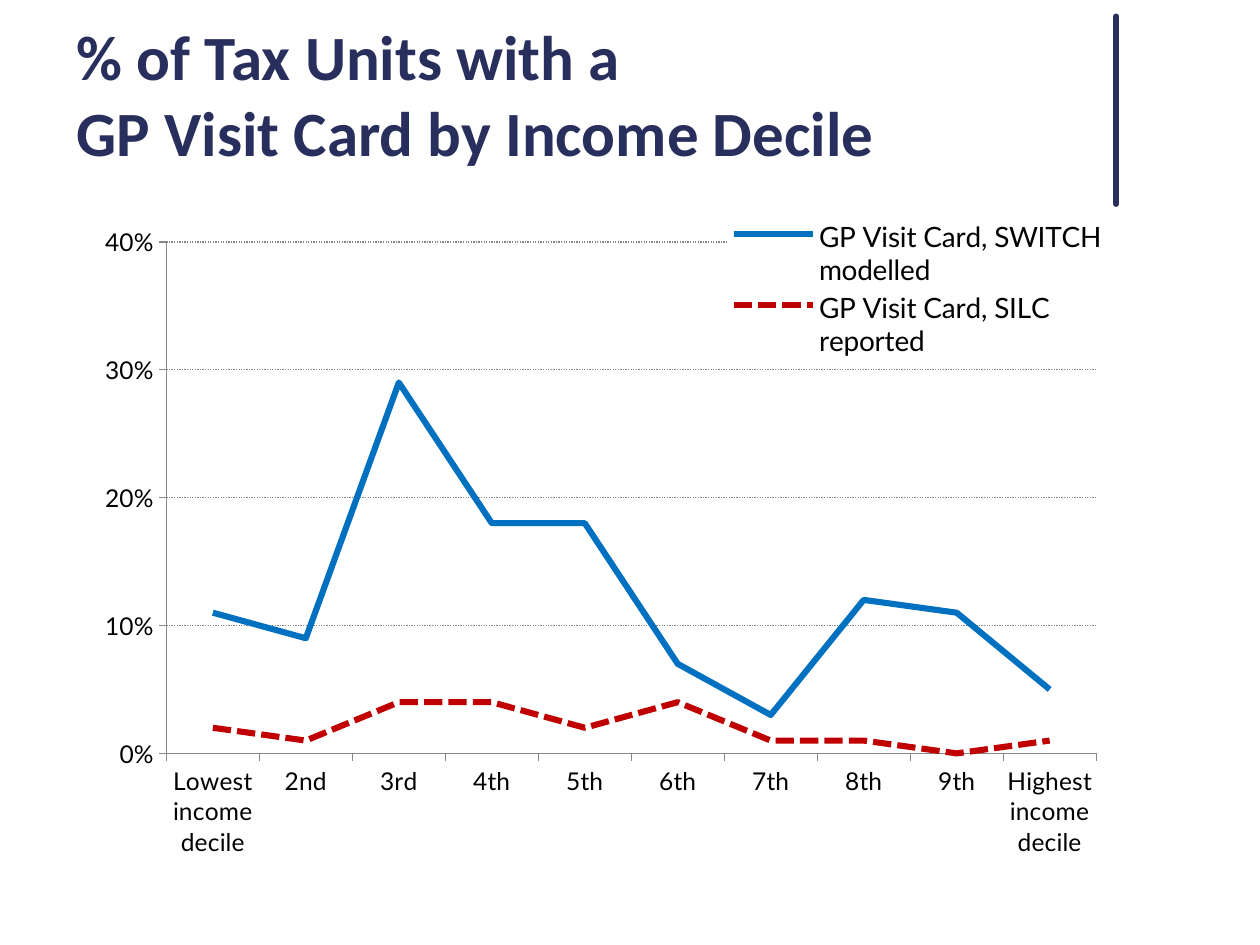
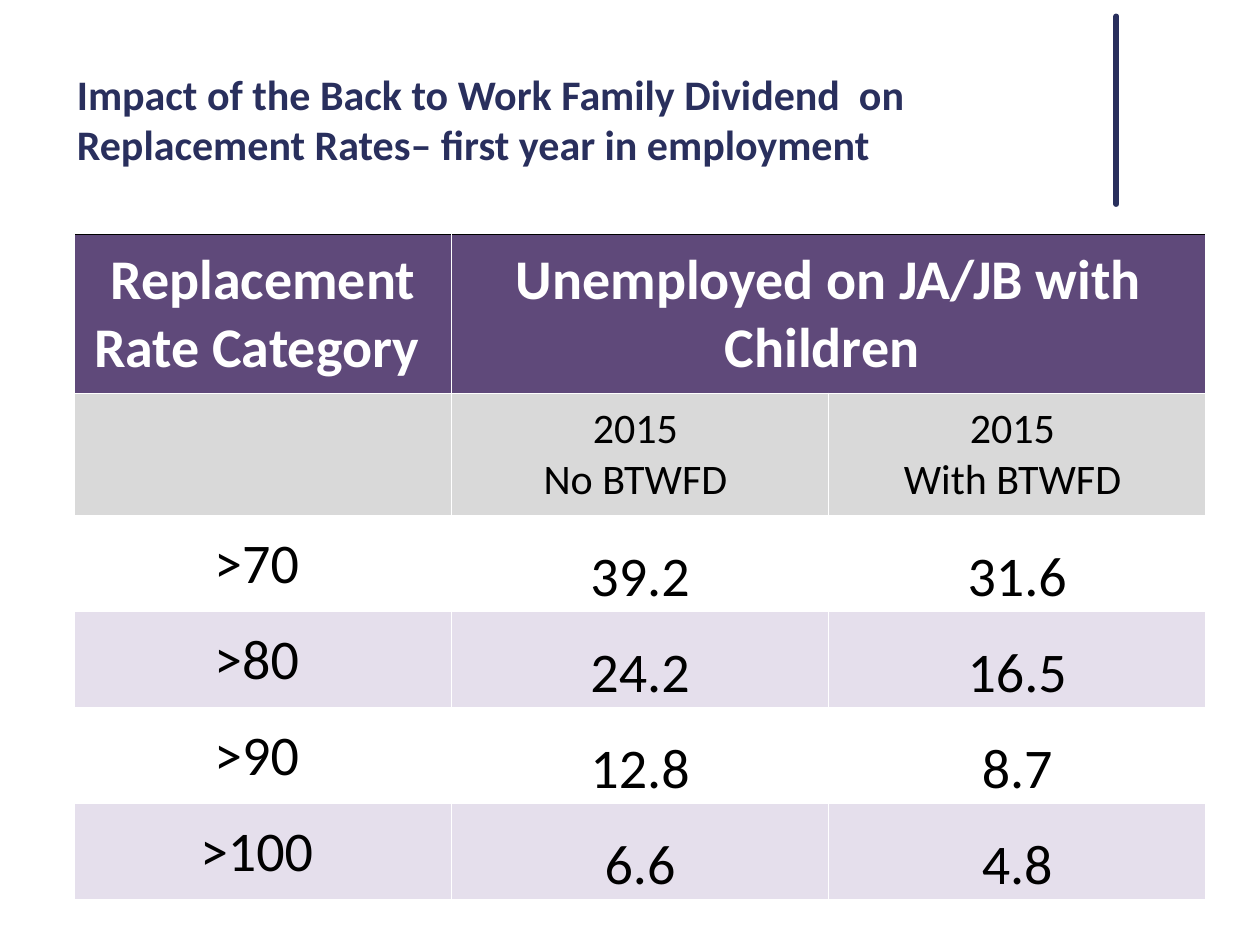
from dataclasses import dataclass
from typing import Any

from lxml.etree import SubElement
from pptx import Presentation
from pptx.chart.data import CategoryChartData
from pptx.dml.color import RGBColor
from pptx.enum.chart import XL_CHART_TYPE, XL_LEGEND_POSITION, XL_TICK_MARK
from pptx.enum.dml import MSO_LINE
from pptx.enum.shapes import MSO_CONNECTOR
from pptx.enum.text import MSO_ANCHOR, PP_ALIGN
from pptx.oxml import parse_xml
from pptx.oxml.ns import nsdecls, qn
from pptx.util import Inches, Pt

NAVY = RGBColor(0x29, 0x2F, 0x5D)
BLUE = RGBColor(0x00, 0x70, 0xC0)
RED = RGBColor(0xC0, 0x00, 0x00)
PURPLE = RGBColor(0x5F, 0x49, 0x7A)
LILAC = RGBColor(0xE5, 0xDF, 0xEC)
SILVER = RGBColor(0xD9, 0xD9, 0xD9)
GRAY = RGBColor(0x86, 0x86, 0x86)
BLACK = RGBColor(0, 0, 0)
WHITE = RGBColor(0xFF, 0xFF, 0xFF)
TITLE = {"name": "Calibri", "bold": True}
CHART = "Lato"
CHART_W, CHART_H = 8.19, 5.2
TABLE_W, TABLE_H = 8.98, 5.28


@dataclass
class Trend:
    name: str
    color: RGBColor
    dash: Any
    vals: tuple[float, ...]


@dataclass
class Look:
    """Format of one kind of table cell."""
    fill: RGBColor
    size: int
    color: RGBColor = BLACK
    bold: bool = False
    anchor: Any = MSO_ANCHOR.MIDDLE
    top: RGBColor = WHITE


TRENDS = (
    Trend("GP Visit Card, SWITCH modelled", BLUE, MSO_LINE.SOLID,
          (0.11, 0.09, 0.29, 0.18, 0.18, 0.07, 0.03, 0.12, 0.11, 0.05)),
    Trend("GP Visit Card, SILC reported", RED, MSO_LINE.SQUARE_DOT,
          (0.02, 0.01, 0.04, 0.04, 0.02, 0.04, 0.01, 0.01, 0, 0.01)),
)
DECILES = ("Lowest income decile", "2nd", "3rd", "4th", "5th", "6th",
           "7th", "8th", "9th", "Highest income decile")
RATES = (
    (">70 ", "39.2", "31.6"),
    (">80 ", "24.2", "16.5"),
    (">90 ", "12.8", "8.7"),
    (">100 ", "6.6", "4.8"),
)
HEAD = Look(PURPLE, 32, WHITE, True, top=BLACK)
SUB = Look(SILVER, 24)


def apply(target: Any, values: dict[str, Any]) -> None:
    for key, value in values.items():
        setattr(target, key, value)


def set_font(font: Any, color: RGBColor, **values: Any) -> None:
    apply(font, values)
    font.color.rgb = color


def add_slide(deck: Any, text: str, size: int) -> Any:
    """Add a slide with its title and the upright rule beside it."""
    slide = deck.slides.add_slide(deck.slide_layouts[5])
    title = slide.shapes.title
    apply(title, {"left": Inches(0.51), "top": Inches(0.44),
                  "width": Inches(8.25), "height": Inches(0.95)})
    frame = title.text_frame
    frame.text = text
    apply(frame, {"vertical_anchor": MSO_ANCHOR.BOTTOM, "word_wrap": True})
    para = frame.paragraphs[0]
    para.alignment = PP_ALIGN.LEFT
    for run in para.runs:
        set_font(run.font, NAVY, size=Pt(size), **TITLE)

    x = Inches(8.86)
    rule = slide.shapes.add_connector(
        MSO_CONNECTOR.STRAIGHT, x, Inches(0.13), x, Inches(1.62))
    rule.line.color.rgb = NAVY
    rule.line.width = Pt(3.25)
    props = rule._element.spPr
    props.find(qn("a:ln")).set("cap", "rnd")
    SubElement(props, qn("a:effectLst"))
    return slide


def place(part: Any, x: float, y: float, w: float, h: float, inner: bool = False) -> None:
    """Fix the place of a chart part, given in inches inside the chart."""
    target = '<c:layoutTarget val="inner"/>' if inner else ""
    shares = (x / CHART_W, y / CHART_H, w / CHART_W, h / CHART_H)
    sizes = "".join(f'<c:{tag} val="{val:.4f}"/>'
                    for tag, val in zip("xywh", shares))
    layout = parse_xml(
        f'<c:layout {nsdecls("c")}><c:manualLayout>{target}'
        f'<c:xMode val="edge"/><c:yMode val="edge"/>{sizes}'
        '</c:manualLayout></c:layout>')
    for old in part.findall(qn("c:layout")):
        part.remove(old)
    if inner:
        part.insert(0, layout)
    else:
        part.find(qn("c:legendPos")).addnext(layout)


def add_trends(slide: Any) -> None:
    data = CategoryChartData(number_format="0%")
    data.categories = DECILES
    for trend in TRENDS:
        data.add_series(trend.name, trend.vals)
    chart = slide.shapes.add_chart(
        XL_CHART_TYPE.LINE, Inches(0.67), Inches(1.7),
        Inches(CHART_W), Inches(CHART_H), data).chart
    apply(chart, {"has_title": False, "has_legend": True})
    set_font(chart.font, BLACK, name=CHART, size=Pt(10))
    plot = chart.plots[0]
    plot.vary_by_categories = False
    for line, trend in zip(plot.series, TRENDS):
        line.smooth = False
        line.format.line.color.rgb = trend.color
        apply(line.format.line, {"width": Pt(3.5), "dash_style": trend.dash})

    for axis in (chart.category_axis, chart.value_axis):
        axis.major_tick_mark = XL_TICK_MARK.OUTSIDE
        set_font(axis.tick_labels.font, BLACK, name=CHART, size=Pt(14))
        axis.format.line.color.rgb = GRAY
    scale = chart.value_axis
    apply(scale, {"minimum_scale": 0, "maximum_scale": 0.4,
                  "major_unit": 0.1, "has_major_gridlines": True})
    apply(scale.tick_labels, {"number_format": "0%",
                              "number_format_is_linked": False})
    grid = scale.major_gridlines.format.line
    grid.color.rgb = GRAY
    apply(grid, {"width": Pt(0.75), "dash_style": MSO_LINE.ROUND_DOT})

    key = chart.legend
    apply(key, {"position": XL_LEGEND_POSITION.CORNER, "include_in_layout": True})
    set_font(key.font, BLACK, name=CHART, size=Pt(16))
    fill = parse_xml(f'<c:spPr {nsdecls("a", "c")}><a:solidFill>'
                     f'<a:srgbClr val="{WHITE}"/></a:solidFill></c:spPr>')
    key._element.find(qn("c:txPr")).addprevious(fill)
    place(key._element, 5.18, 0.01, 3, 1.16)
    place(plot._element.getparent(), 0.65, 0.22, 7.38, 4.06, inner=True)


def draw_cell(cell: Any, text: str, look: Look) -> None:
    props = cell._tc.get_or_add_tcPr()
    for side in "LRTB":
        color = look.top if side == "T" else WHITE
        props.append(parse_xml(
            f'<a:ln{side} {nsdecls("a")} w="{Pt(0.5)}"><a:solidFill>'
            f'<a:srgbClr val="{color}"/></a:solidFill></a:ln{side}>'))
    edge = Inches(0.01)
    apply(cell, {"margin_left": edge, "margin_right": edge, "margin_top": edge,
                 "margin_bottom": 0, "vertical_anchor": look.anchor})
    cell.fill.solid()
    cell.fill.fore_color.rgb = look.fill
    cell.text = text
    for para in cell.text_frame.paragraphs:
        para.alignment = PP_ALIGN.CENTER
        set_font(para.font, look.color, name="Calibri",
                 size=Pt(look.size), bold=look.bold)


def add_rates(slide: Any) -> None:
    tops = (1.26, 0.97)
    heights = tops + ((TABLE_H - sum(tops)) / len(RATES),) * len(RATES)
    table = slide.shapes.add_table(
        len(heights), 3, Inches(0.59), Inches(1.86),
        Inches(TABLE_W), Inches(TABLE_H)).table
    apply(table, {"first_row": False, "horz_banding": False})
    for row, height in zip(table.rows, heights):
        row.height = Inches(height)
    for col in table.columns:
        col.width = Inches(TABLE_W / 3)

    heads = ("Replacement Rate Category ", "Unemployed on JA/JB with Children ", "")
    subs = ("", "2015 \nNo BTWFD ", "2015 \nWith BTWFD ")
    for r, (texts, look) in enumerate(((heads, HEAD), (subs, SUB))):
        for c, text in enumerate(texts):
            draw_cell(table.cell(r, c), text, look)
    table.cell(0, 1).merge(table.cell(0, 2))
    for r, texts in enumerate(RATES):
        fill = LILAC if r % 2 else WHITE
        for c, text in enumerate(texts):
            anchor = MSO_ANCHOR.BOTTOM if c else MSO_ANCHOR.MIDDLE
            draw_cell(table.cell(r + 2, c), text, Look(fill, 32, anchor=anchor))


def main() -> None:
    deck = Presentation()
    apply(deck, {"slide_width": Inches(10), "slide_height": Inches(7.5)})
    add_trends(add_slide(
        deck, "% of Tax Units with a \vGP Visit Card by Income Decile", 36))
    add_rates(add_slide(
        deck, "Impact of the Back to Work Family Dividend  on "
        "Replacement Rates– first year in employment", 24))
    deck.save("out.pptx")


if __name__ == "__main__":
    main()
